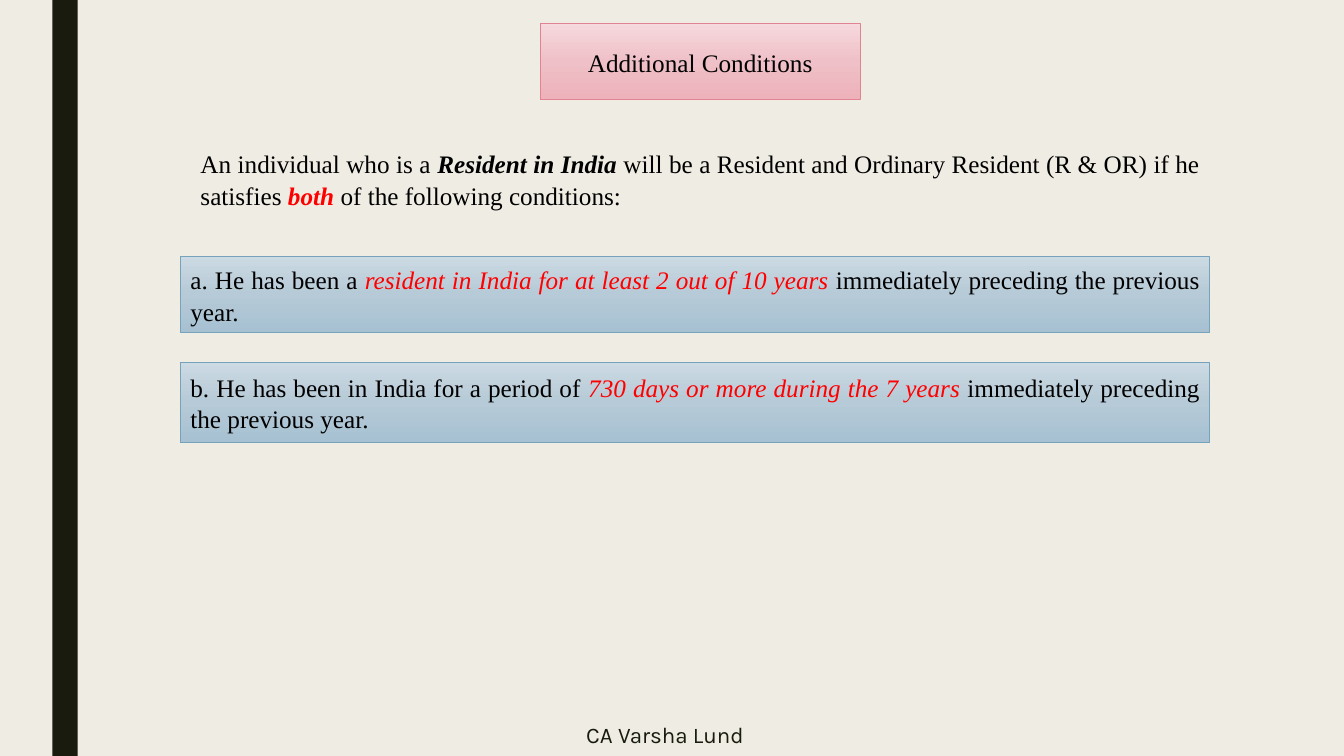
from copy import deepcopy

from pptx import Presentation
from pptx.dml.color import RGBColor
from pptx.enum.shapes import MSO_SHAPE
from pptx.enum.text import MSO_ANCHOR, PP_ALIGN
from pptx.oxml.ns import qn
from pptx.util import Inches, Pt

COLORS = {
    "background": "EFEDE3", "bar": "191B0E", "text": "000000", "accent": "FF0000",
    "pink line": "E28394", "blue line": "77A2BB",
}
GRADIENTS = {
    "pink": ("F6D9DD", "EFC0C7", "EEB2BB"),
    "blue": ("CCDAE3", "B6CAD7", "A7C1D2"),
}


def rgb(name):
    return RGBColor.from_string(COLORS.get(name, name))


class SlideBuilder:
    """Holds the style and slide; lengths are percentages of the slide size."""

    serif = "Times New Roman"
    sans = "Karla"

    def __init__(self, deck):
        self.width, self.height = deck.slide_width, deck.slide_height
        self.slide = deck.slides.add_slide(deck.slide_layouts[6])
        background = self.slide.background.fill
        background.solid()
        background.fore_color.rgb = rgb("background")

    def place(self, left, top, width, height):
        return (round(self.width * left / 100), round(self.height * top / 100),
                round(self.width * width / 100), round(self.height * height / 100))

    def rectangle(self, area):
        shape = self.slide.shapes.add_shape(MSO_SHAPE.RECTANGLE, *self.place(*area))
        shape.shadow.inherit = False
        return shape

    def bar(self, area):
        shape = self.rectangle(area)
        shape.fill.solid()
        shape.fill.fore_color.rgb = rgb("bar")
        shape.line.fill.background()

    def panel(self, area, tint, runs, align=PP_ALIGN.JUSTIFY):
        shape = self.rectangle(area)
        shape.fill.gradient()
        shape.fill.gradient_angle = 270
        # The default gradient has two stops; add a third one
        stop_list = shape._element.spPr.find(".//" + qn("a:gsLst"))
        stop_list.append(deepcopy(stop_list[-1]))
        for index, stop in enumerate(shape.fill.gradient_stops):
            stop.position = index / 2
            stop.color.rgb = rgb(GRADIENTS[tint][index])
        shape.line.color.rgb = rgb(f"{tint} line")
        shape.line.width = Pt(0.5)
        self.set_text(shape, runs, align)

    def text(self, area, runs, align, anchor=MSO_ANCHOR.TOP, **style):
        box = self.slide.shapes.add_textbox(*self.place(*area))
        self.set_text(box, runs, align, anchor, **style)

    def set_text(self, shape, runs, align, anchor=MSO_ANCHOR.MIDDLE,
                 font=serif, size=18, color="text"):
        frame = shape.text_frame
        frame.word_wrap = True
        frame.vertical_anchor = anchor
        para = frame.paragraphs[0]
        para.alignment = align
        para.line_spacing = 1.05
        para.font.name = font
        para.font.size = Pt(size)
        para.font.color.rgb = rgb(color)
        for words, *marks in runs:
            span = para.add_run()
            span.text = words
            if "bold" in marks:
                span.font.bold = True
            if "italic" in marks:
                span.font.italic = True
            if "accent" in marks:
                span.font.color.rgb = rgb("accent")


def main():
    deck = Presentation()
    deck.slide_width, deck.slide_height = Inches(13.33), Inches(7.5)
    page = SlideBuilder(deck)

    # Side bar and title
    page.bar((3.9, 0, 1.88, 100))
    page.panel((40.21, 3.07, 23.78, 10.13), "pink",
               [("Additional Conditions",)], PP_ALIGN.CENTER)

    # Introduction
    page.text((14.18, 18.8, 75.84, 9.47), [
        ("An individual who is a ",),
        ("Resident in India ", "bold", "italic"),
        ("will be a Resident and Ordinary Resident (R & OR) if he satisfies ",),
        ("both", "bold", "italic", "accent"),
        (" of the following conditions:",),
    ], PP_ALIGN.JUSTIFY)

    # The two conditions
    conditions = [
        (33.87, 10.13, "a. He has been a ",
         "resident in India for at least 2 out of 10 years "),
        (47.87, 10.67, "b. He has been in India for a period of ",
         "730 days or more during the 7 years "),
    ]
    for top, height, opening, rule in conditions:
        page.panel((13.43, top, 76.59, height), "blue", [
            (opening,),
            (rule, "italic", "accent"),
            ("immediately preceding the previous year.",),
        ])

    # Footer
    page.text((23.71, 94.13, 51.54, 5.87), [("CA Varsha Lund",)], PP_ALIGN.CENTER,
              MSO_ANCHOR.MIDDLE, font=page.sans, size=16, color="bar")

    deck.save("out.pptx")


if __name__ == "__main__":
    main()
